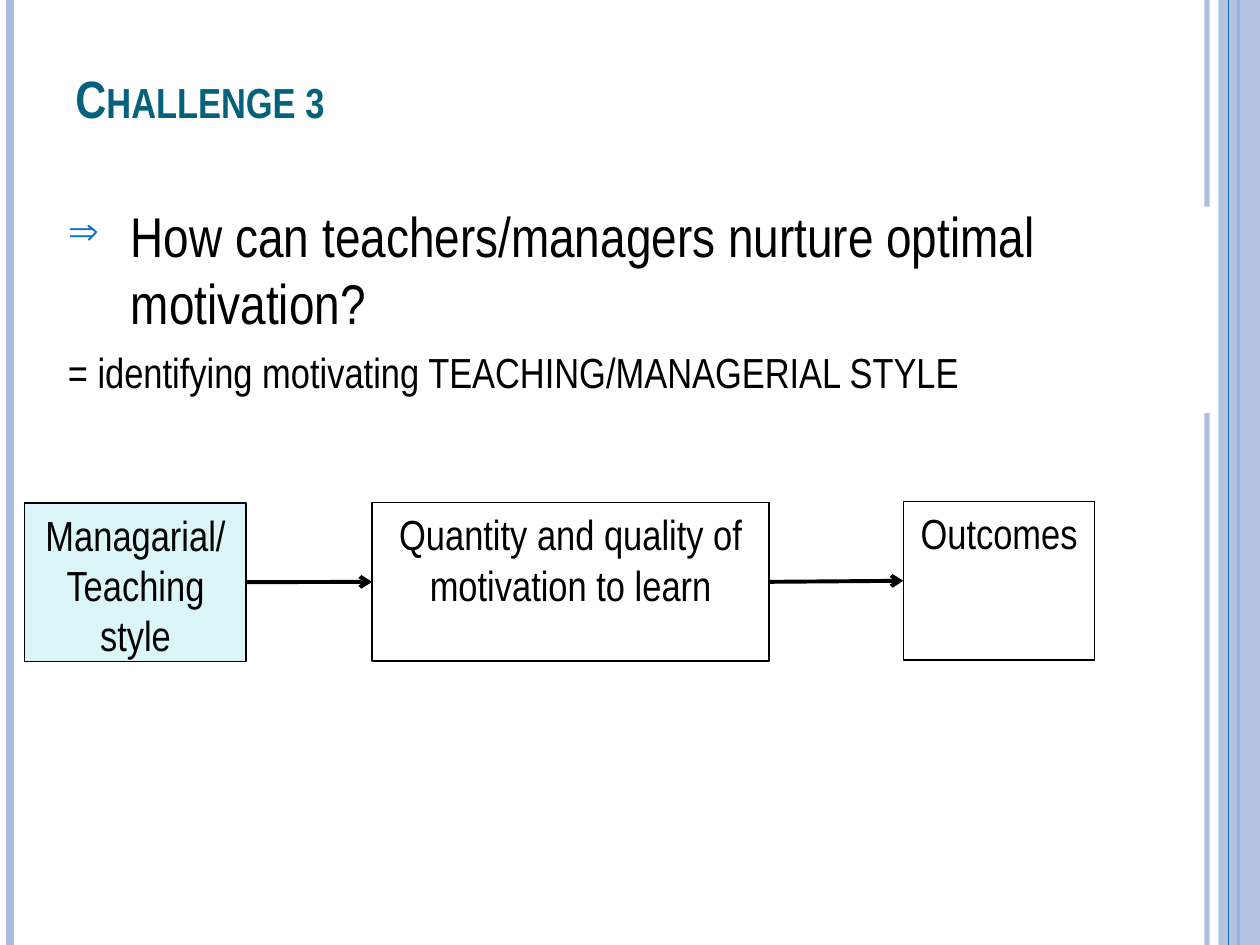
from lxml import etree
from pptx import Presentation
from pptx.dml.color import RGBColor
from pptx.enum import shapes, text
from pptx.oxml import ns
from pptx.util import Pt

BLACK = RGBColor(0x00, 0x00, 0x00)
WHITE = RGBColor(0xFF, 0xFF, 0xFF)
LAVENDER = RGBColor(0xAB, 0xBB, 0xDF)
BLUE = RGBColor(0x0F, 0x6F, 0xC6)
TEAL = RGBColor(0x04, 0x61, 0x7B)
PALE_CYAN = RGBColor(0xDB, 0xF5, 0xF9)

WIDTH, HEIGHT = 720, 540
FONT = "Arial Narrow"

TITLE = "Challenge 3"
QUESTION = "How can teachers/managers nurture optimal motivation?"
ANSWER = "= identifying motivating TEACHING/MANAGERIAL STYLE"
STAGES = [
    ("Managarial/ Teaching style", (14.2, 287.4, 126.4, 90.6), PALE_CYAN),
    ("Quantity and quality of motivation to learn", (212.6, 287.2, 226.8, 90.6), WHITE),
    ("Outcomes", (516.2, 286.6, 109.4, 90.6), WHITE),
]
RULES_BELOW_BAND = [(689.8, LAVENDER, 3, 93), (5.8, LAVENDER, 4.5, 100), (707.8, BLUE, 1.5, 100)]
RULES_ABOVE_BAND = [(702, BLUE, 0.75, 100)]

prs = Presentation()
prs.slide_width, prs.slide_height = Pt(WIDTH), Pt(HEIGHT)
slide = prs.slides.add_slide(prs.slide_layouts[6])


def add_element(parent, tag, **attributes):
    return etree.SubElement(parent, ns.qn(tag), attributes)


def set_opacity(fill_owner, percent):
    color = next(fill_owner.iter(ns.qn("a:srgbClr")))
    add_element(color, "a:alpha", val=str(percent * 1000))


def add_line(start, end, color, width):
    line = slide.shapes.add_connector(
        shapes.MSO_CONNECTOR.STRAIGHT, *(Pt(v) for v in (*start, *end)))
    line.line.color.rgb = color
    line.line.width = Pt(width)
    add_element(line._element.spPr, "a:effectLst")
    return line


def add_rules(rules):
    for x, color, width, opacity in rules:
        rule = add_line((x, 0), (x, HEIGHT), color, width)
        if opacity < 100:
            set_opacity(rule._element.spPr, opacity)


def add_rectangle(place, fill, outline=None):
    box = slide.shapes.add_shape(shapes.MSO_SHAPE.RECTANGLE, *map(Pt, place))
    box.shadow.inherit = False
    box.fill.solid()
    box.fill.fore_color.rgb = fill
    if outline is None:
        box.line.fill.background()
    else:
        box.line.color.rgb = outline
        box.line.width = Pt(0.75)
    return box


def add_frame(place, **settings):
    frame = slide.shapes.add_textbox(*map(Pt, place)).text_frame
    for name, value in {"word_wrap": True, **settings}.items():
        setattr(frame, name, value)
    return frame


def write(paragraph, words, size, color=BLACK, bold=False):
    run = paragraph.add_run()
    run.text = words
    for name, value in {"name": FONT, "size": Pt(size), "bold": bold}.items():
        setattr(run.font, name, value)
    run.font.color.rgb = color
    return run


def hang(paragraph, indent):
    properties = paragraph._p.get_or_add_pPr()
    properties.set("marL", str(Pt(indent)))
    properties.set("indent", str(-Pt(indent)))
    return properties


add_rules(RULES_BELOW_BAND)
band = add_rectangle((696.2, 0, 23.8, HEIGHT), LAVENDER)
set_opacity(band._element.spPr, 87)
add_rules(RULES_ABOVE_BAND)
add_rectangle((22.3, 118, 669.6, 118), WHITE)

for label, place, fill in STAGES:
    frame = add_rectangle(place, fill, BLACK).text_frame
    frame.word_wrap = True
    frame.vertical_anchor = text.MSO_ANCHOR.TOP
    frame.paragraphs[0].alignment = text.PP_ALIGN.CENTER
    write(frame.paragraphs[0], label, 24)

for (_, source, _), (_, target, _) in zip(STAGES, STAGES[1:]):
    arrow = add_line((source[0] + source[2], source[1] + source[3] / 2),
                     (target[0], target[1] + target[3] / 2), BLACK, 2.25)
    add_element(arrow.line._get_or_add_ln(), "a:tailEnd", type="arrow")

heading = add_frame((36, 21.6, 588, 90), vertical_anchor=text.MSO_ANCHOR.BOTTOM,
                    margin_bottom=Pt(38))
heading_run = write(heading.paragraphs[0], TITLE, 30, TEAL, True)
heading_run._r.get_or_add_rPr().set("cap", "small")

body = add_frame((31.7, 111.6, 588, 384))
question = body.paragraphs[0]
bullet = hang(question, 36)
add_element(add_element(bullet, "a:buClr"), "a:srgbClr", val=str(BLUE))
add_element(bullet, "a:buSzPct", val="70000")
add_element(bullet, "a:buChar", char="⇒")
write(question, QUESTION, 32)

answer = body.add_paragraph()
add_element(hang(answer, 21.6), "a:buNone")
answer.space_before = Pt(6)
write(answer, ANSWER, 24)

prs.save("out.pptx")
